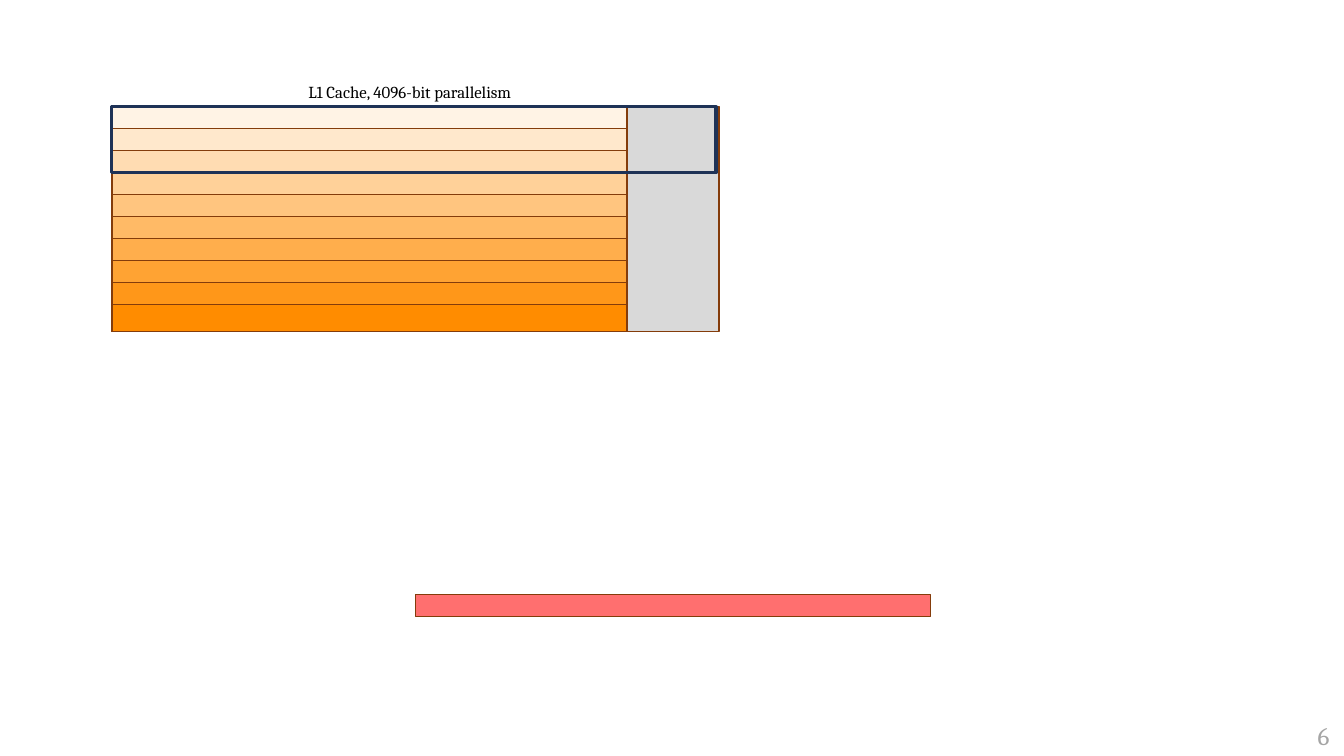
from dataclasses import dataclass
from typing import Optional

import lxml.etree
import pptx
import pptx.dml.color
import pptx.enum.shapes
import pptx.enum.text
import pptx.oxml.ns
import pptx.slide
import pptx.util

RGBColor = pptx.dml.color.RGBColor

ORANGE = RGBColor(0xFF, 0x8C, 0x00)
RED = RGBColor(0xFF, 0x14, 0x14)
GREY = RGBColor(0xD9, 0xD9, 0xD9)
BROWN = RGBColor(0x84, 0x3C, 0x0B)
NAVY = RGBColor(0x1E, 0x32, 0x56)
BLACK = RGBColor(0x00, 0x00, 0x00)
PAGE_GREY = RGBColor(0xA5, 0xA5, 0xA5)

FONT = "Cambria"
SLIDE_WIDTH = pptx.util.Inches(13.33)
SLIDE_HEIGHT = pptx.util.Inches(7.5)

CACHE_LEFT, CACHE_TOP = 8.33, 14.13
CACHE_WIDTH, CACHE_HEIGHT = 38.33, 29.73
ROW_COUNT = 10
ROW_HEIGHT = 2.91
SIDE_WIDTH = 6.83
FRAME_ROWS = 3


@dataclass(frozen=True)
class Area:
    """Position and size as percentages of the slide."""
    left: float
    top: float
    width: float
    height: float

    def lengths(self) -> tuple[int, int, int, int]:
        return (
            round(SLIDE_WIDTH * self.left / 100),
            round(SLIDE_HEIGHT * self.top / 100),
            round(SLIDE_WIDTH * self.width / 100),
            round(SLIDE_HEIGHT * self.height / 100),
        )


@dataclass(frozen=True)
class Block:
    area: Area
    fill: Optional[RGBColor] = None
    opacity: int = 100
    line: RGBColor = BROWN
    line_width: float = 1


@dataclass(frozen=True)
class Label:
    area: Area
    text: str
    size: int
    color: RGBColor


def draw_block(page: pptx.slide.Slide, block: Block) -> None:
    box = page.shapes.add_shape(
        pptx.enum.shapes.MSO_SHAPE.RECTANGLE, *block.area.lengths()
    )
    box.shadow.inherit = False
    box.line.color.rgb = block.line
    box.line.width = pptx.util.Pt(block.line_width)
    if block.fill is None:
        box.fill.background()
        return
    box.fill.solid()
    box.fill.fore_color.rgb = block.fill
    if block.opacity < 100:
        qn = pptx.oxml.ns.qn
        color = box.element.spPr.find(f"{qn('a:solidFill')}/{qn('a:srgbClr')}")
        lxml.etree.SubElement(color, qn("a:alpha"), val=str(block.opacity * 1000))


def draw_label(page: pptx.slide.Slide, label: Label) -> None:
    box = page.shapes.add_textbox(*label.area.lengths())
    frame = box.text_frame
    frame.word_wrap = True
    frame.auto_size = pptx.enum.text.MSO_AUTO_SIZE.SHAPE_TO_FIT_TEXT
    frame.text = label.text
    font = frame.paragraphs[0].runs[0].font
    font.name = FONT
    font.size = pptx.util.Pt(label.size)
    font.color.rgb = label.color


def cache_row(index: int) -> Block:
    offset = index * ROW_HEIGHT
    is_last = index == ROW_COUNT - 1
    height = CACHE_HEIGHT - offset if is_last else ROW_HEIGHT
    area = Area(CACHE_LEFT, CACHE_TOP + offset, CACHE_WIDTH, height)
    return Block(area, ORANGE, opacity=10 * (index + 1))


def main() -> None:
    deck = pptx.Presentation()
    deck.slide_width = SLIDE_WIDTH
    deck.slide_height = SLIDE_HEIGHT
    page = deck.slides.add_slide(deck.slide_layouts[6])

    outline = Block(Area(CACHE_LEFT, CACHE_TOP, CACHE_WIDTH, CACHE_HEIGHT))
    rows = [cache_row(index) for index in range(ROW_COUNT)]
    register = Block(Area(30.91, 78.67, CACHE_WIDTH, ROW_HEIGHT), RED, opacity=61)
    side = Block(
        Area(CACHE_LEFT + CACHE_WIDTH, CACHE_TOP, SIDE_WIDTH, CACHE_HEIGHT), GREY
    )
    frame = Block(
        Area(8.28, CACHE_TOP, 45, FRAME_ROWS * ROW_HEIGHT), line=NAVY, line_width=2.25
    )
    title = Label(
        Area(22.2, 10.13, 20.4, 4), "L1 Cache, 4096-bit parallelism", 12, BLACK
    )
    page_number = Label(Area(97.3, 94.67, 2.7, 5.33), "6", 18, PAGE_GREY)

    for block in [outline, *rows, register, side]:
        draw_block(page, block)
    draw_label(page, title)
    draw_block(page, frame)
    draw_label(page, page_number)
    deck.save("out.pptx")


if __name__ == "__main__":
    main()
